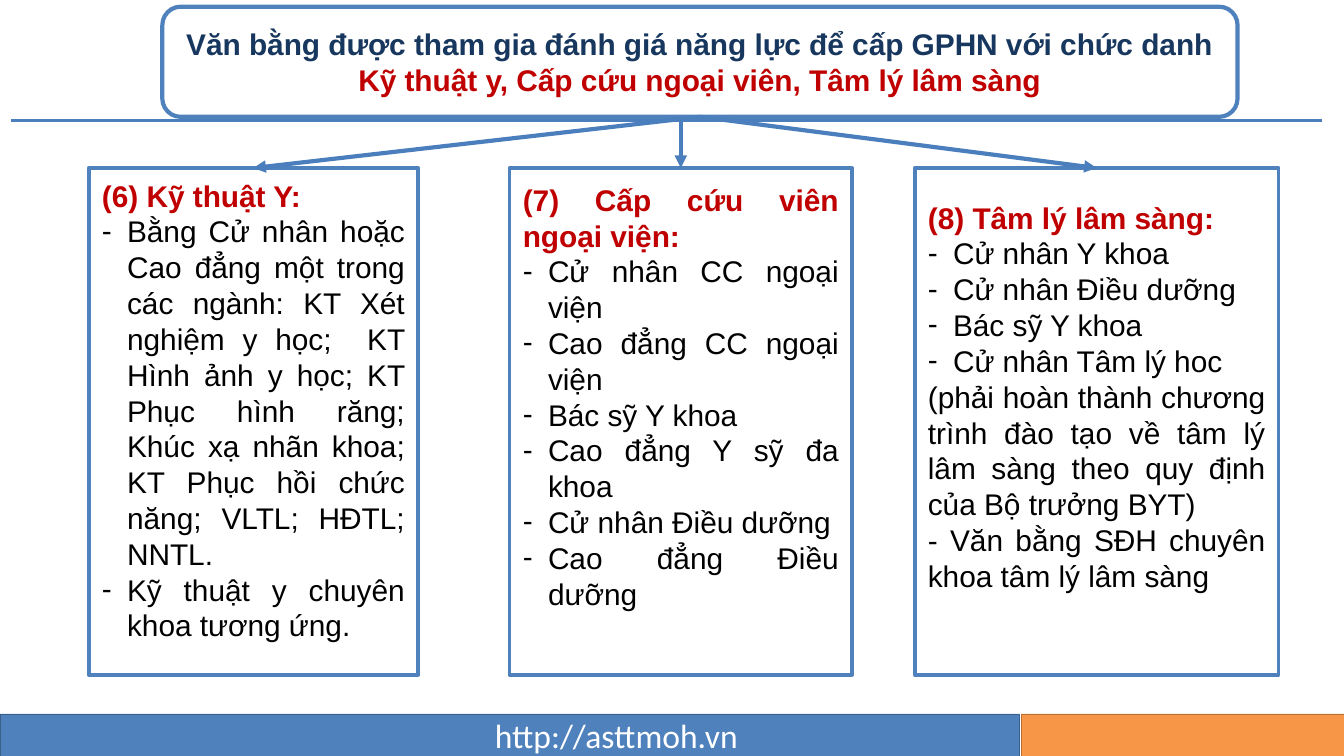
from lxml.etree import SubElement
from pptx import Presentation
from pptx.dml.color import RGBColor
from pptx.enum.shapes import MSO_CONNECTOR, MSO_SHAPE
from pptx.enum.text import MSO_ANCHOR, PP_ALIGN
from pptx.oxml.ns import qn
from pptx.util import Pt

BLUE, LINE_BLUE, RED, NAVY = "4F81BD", "4B7EBC", "C00000", "17375E"
BLACK, WHITE, ORANGE = "000000", "FFFFFF", "F79646"

# Content
TITLE = [
    ("Văn bằng được tham gia đánh giá năng lực để cấp GPHN với chức danh ", NAVY),
    ("Kỹ thuật y, Cấp cứu ngoại viên, Tâm lý lâm sàng", RED),
]
WEBSITE = "http://asttmoh.vn"
# Each column: left, width, space above the text, heading, bullets, plain notes
COLUMNS = [
    (47.5, 176.5, 5, "(6) Kỹ thuật Y: ", [
        "Bằng Cử nhân hoặc Cao đẳng một trong các ngành: KT Xét nghiệm y học;  "
        "KT Hình ảnh y học; KT Phục hình răng; Khúc xạ nhãn khoa; "
        "KT Phục hồi chức năng; VLTL; HĐTL; NNTL.",
        "Kỹ thuật y chuyên khoa tương ứng.",
    ], []),
    (273, 183.5, 7.2, "(7) Cấp cứu viên ngoại viện:", [
        "Cử nhân CC ngoại viện",
        "Cao đẳng CC ngoại viện",
        "Bác sỹ Y khoa",
        "Cao đẳng Y sỹ đa khoa",
        "Cử nhân Điều dưỡng",
        "Cao đẳng Điều dưỡng",
    ], []),
    (490, 195, 16.8, "(8) Tâm lý lâm sàng:", [
        "Cử nhân Y khoa",
        "Cử nhân Điều dưỡng",
        "Bác sỹ Y khoa",
        "Cử nhân Tâm lý hoc",
    ], [
        "(phải hoàn thành chương trình đào tạo về tâm lý lâm sàng theo quy định "
        "của Bộ trưởng BYT)",
        "- Văn bằng SĐH chuyên khoa tâm lý lâm sàng",
    ]),
]
COLUMN_TOP, COLUMN_HEIGHT = 90, 271.5
TITLE_BOTTOM = 62.6
INDENT = 13.5

prs = Presentation()
prs.slide_width, prs.slide_height = Pt(720), Pt(405)
slide = prs.slides.add_slide(prs.slide_layouts[6])


def color(hex_code):
    return RGBColor.from_string(hex_code)


def add_box(kind, left, top, width, height, fill, line, line_width):
    box = slide.shapes.add_shape(kind, Pt(left), Pt(top), Pt(width), Pt(height))
    box.shadow.inherit = False
    box.fill.solid()
    box.fill.fore_color.rgb = color(fill)
    box.line.color.rgb = color(line)
    box.line.width = Pt(line_width)
    return box


def add_line(x1, y1, x2, y2, width):
    line = slide.shapes.add_connector(
        MSO_CONNECTOR.STRAIGHT, Pt(x1), Pt(y1), Pt(x2), Pt(y2))
    line.line.color.rgb = color(LINE_BLUE)
    line.line.width = Pt(width)
    SubElement(line._element.spPr, qn("a:effectLst"))
    return line


def set_font(font, size, name, hex_code=None, bold=False):
    font.size, font.name, font.bold = Pt(size), name, bold
    if hex_code:
        font.color.rgb = color(hex_code)


def add_dash(paragraph):
    props = paragraph._p.get_or_add_pPr()
    props.set("marL", str(Pt(INDENT)))
    props.set("indent", str(-Pt(INDENT)))
    SubElement(props, qn("a:buFont"), typeface="Arial")
    SubElement(props, qn("a:buChar"), char="-")


# Footer bars, website and rule under the title
add_box(MSO_SHAPE.RECTANGLE, 0, 382.5, 546, 22.5, BLUE, "3A5F8C", 0.25)
add_box(MSO_SHAPE.RECTANGLE, 547, 382.5, 173, 22.5, ORANGE, "B76F34", 0.25)
website = slide.shapes.add_textbox(Pt(258), Pt(379.5), Pt(147), Pt(29)).text_frame
website.word_wrap = False
website.text = WEBSITE
set_font(website.paragraphs[0].font, 18, "Calibri", WHITE)
add_line(6, 64.5, 708, 64.5, 1.5)

# Title
title = add_box(MSO_SHAPE.ROUNDED_RECTANGLE, 87, 3.6, 576, TITLE_BOTTOM - 3.6,
                WHITE, BLUE, 2.25)
title.text_frame.word_wrap = True
title.text_frame.vertical_anchor = MSO_ANCHOR.MIDDLE
heading_line = title.text_frame.paragraphs[0]
heading_line.alignment = PP_ALIGN.CENTER
set_font(heading_line.font, 16, "Arial", bold=True)
for words, hex_code in TITLE:
    run = heading_line.add_run()
    run.text = words
    run.font.color.rgb = color(hex_code)

# Columns
column_boxes = []
for left, width, space_above, heading, bullets, notes in COLUMNS:
    column = add_box(MSO_SHAPE.RECTANGLE, left, COLUMN_TOP, width, COLUMN_HEIGHT,
                     WHITE, BLUE, 2)
    column_boxes.append(column)
    frame = column.text_frame
    frame.word_wrap = True
    frame.vertical_anchor = MSO_ANCHOR.TOP
    frame.margin_top = Pt(space_above)
    for i, words in enumerate([heading, *bullets, *notes]):
        paragraph = frame.paragraphs[0] if i == 0 else frame.add_paragraph()
        paragraph.text = words
        paragraph.alignment = PP_ALIGN.JUSTIFY
        if words in bullets:
            add_dash(paragraph)
        set_font(paragraph.font, 16, "Arial", BLACK if i else RED, bold=i == 0)

# Arrows from the title to each column
for i, column in enumerate(column_boxes):
    center = COLUMNS[i][0] + COLUMNS[i][1] / 2
    arrow = add_line(center, TITLE_BOTTOM, center, COLUMN_TOP, 2.25)
    if i != 1:  # the middle arrow drops straight down
        arrow.begin_connect(title, 2)
    arrow.end_connect(column, 0)
    SubElement(arrow.line._get_or_add_ln(), qn("a:tailEnd"), type="triangle")

prs.save("out.pptx")
